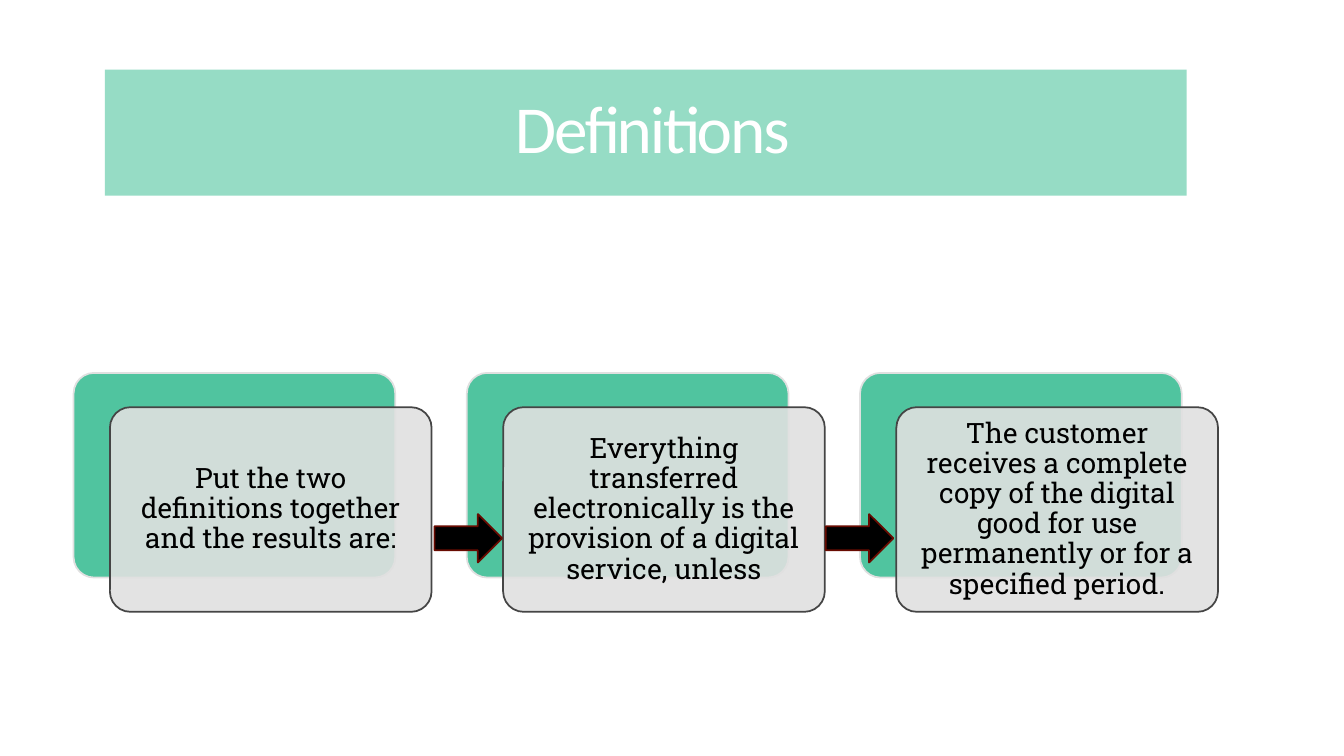
from lxml.etree import SubElement
from pptx import Presentation
from pptx.dml.color import RGBColor
from pptx.enum.shapes import MSO_SHAPE
from pptx.enum.text import MSO_ANCHOR, PP_ALIGN
from pptx.oxml.ns import qn
from pptx.util import Inches, Pt

COLORS = {
    "banner": "96DCC5",
    "card_back": "50C49F",
    "card_front": "E0E0E0",
    "card_edge": "454545",
    "arrow": "000000",
    "arrow_edge": "680B01",
    "title": "FFFFFF",
    "body": "000000",
}
STEPS = [
    "Put the two definitions together and the results are:",
    "Everything transferred electronically is the provision of a digital service, unless",
    "The customer receives a complete copy of the digital good for use permanently "
    "or for a specified period.",
]
CARD_LEFT, CARD_TOP, CARD_PITCH = 0.73, 3.7, 3.9
CARD_WIDTH, CARD_HEIGHT = 3.19, 2.03
FRONT_SHIFT_X, FRONT_SHIFT_Y = 0.36, 0.34
ARROW_LEFT, ARROW_PITCH = 4.31, 3.88


def rgb(name):
    return RGBColor.from_string(COLORS[name])


class DefinitionsSlide:
    def __init__(self, slide):
        self.slide = slide

    def block(self, kind, left, top, width, height, fill, edge=None):
        """Add a filled preset shape, outlined only when an edge is named."""
        block = self.slide.shapes.add_shape(
            kind, Inches(left), Inches(top), Inches(width), Inches(height))
        block.shadow.inherit = False
        block.fill.solid()
        block.fill.fore_color.rgb = rgb(fill)
        if edge:
            block.line.color.rgb = rgb(edge)
            block.line.width = Pt(1.25)
        else:
            block.line.fill.background()
        return block

    def centred_text(self, holder, words, font, size, color, inset, spacing):
        """Put one centred paragraph into a shape or text box."""
        frame = holder.text_frame
        frame.text = words
        frame.word_wrap = True
        frame.vertical_anchor = MSO_ANCHOR.MIDDLE
        frame.margin_left = frame.margin_right = Inches(inset)
        frame.margin_top = frame.margin_bottom = Inches(inset)
        paragraph = frame.paragraphs[0]
        paragraph.alignment = PP_ALIGN.CENTER
        paragraph.line_spacing = spacing
        run = paragraph.runs[0]
        run.font.name = font
        run.font.size = Pt(size)
        run.font.color.rgb = rgb(color)
        return run

    def title(self, words):
        self.block(MSO_SHAPE.RECTANGLE, 1.04, 0.69, 10.73, 1.25, "banner")
        heading = self.slide.shapes.add_textbox(
            Inches(1.17), Inches(0.69), Inches(10.6), Inches(1.25))
        run = self.centred_text(heading, words, "Calibri", 48, "title", 0.25, 0.85)
        run.font._element.set("spc", "-150")

    def card(self, left, words):
        """Add a green card with a translucent text card shifted over it."""
        back = self.block(MSO_SHAPE.ROUNDED_RECTANGLE, left, CARD_TOP,
                          CARD_WIDTH, CARD_HEIGHT, "card_back", "card_front")
        front = self.block(MSO_SHAPE.ROUNDED_RECTANGLE, left + FRONT_SHIFT_X,
                           CARD_TOP + FRONT_SHIFT_Y, CARD_WIDTH, CARD_HEIGHT,
                           "card_front", "card_edge")
        for layer in (back, front):
            layer.adjustments[0] = 0.1
        fill_color = front._element.spPr.find(qn("a:solidFill"))[0]
        SubElement(fill_color, qn("a:alpha"), val="90000")
        self.centred_text(front, words, "Roboto Slab", 20, "body", 0.08, 0.9)

    def arrow(self, left):
        self.block(MSO_SHAPE.RIGHT_ARROW, left, 5.1, 0.67, 0.48, "arrow", "arrow_edge")


def main():
    deck = Presentation()
    deck.slide_width, deck.slide_height = Inches(13.33), Inches(7.5)
    page = DefinitionsSlide(deck.slides.add_slide(deck.slide_layouts[6]))
    page.title("Definitions")
    for index, words in enumerate(STEPS):
        page.card(CARD_LEFT + index * CARD_PITCH, words)
    for index in range(len(STEPS) - 1):
        page.arrow(ARROW_LEFT + index * ARROW_PITCH)
    deck.save("out.pptx")


if __name__ == "__main__":
    main()
